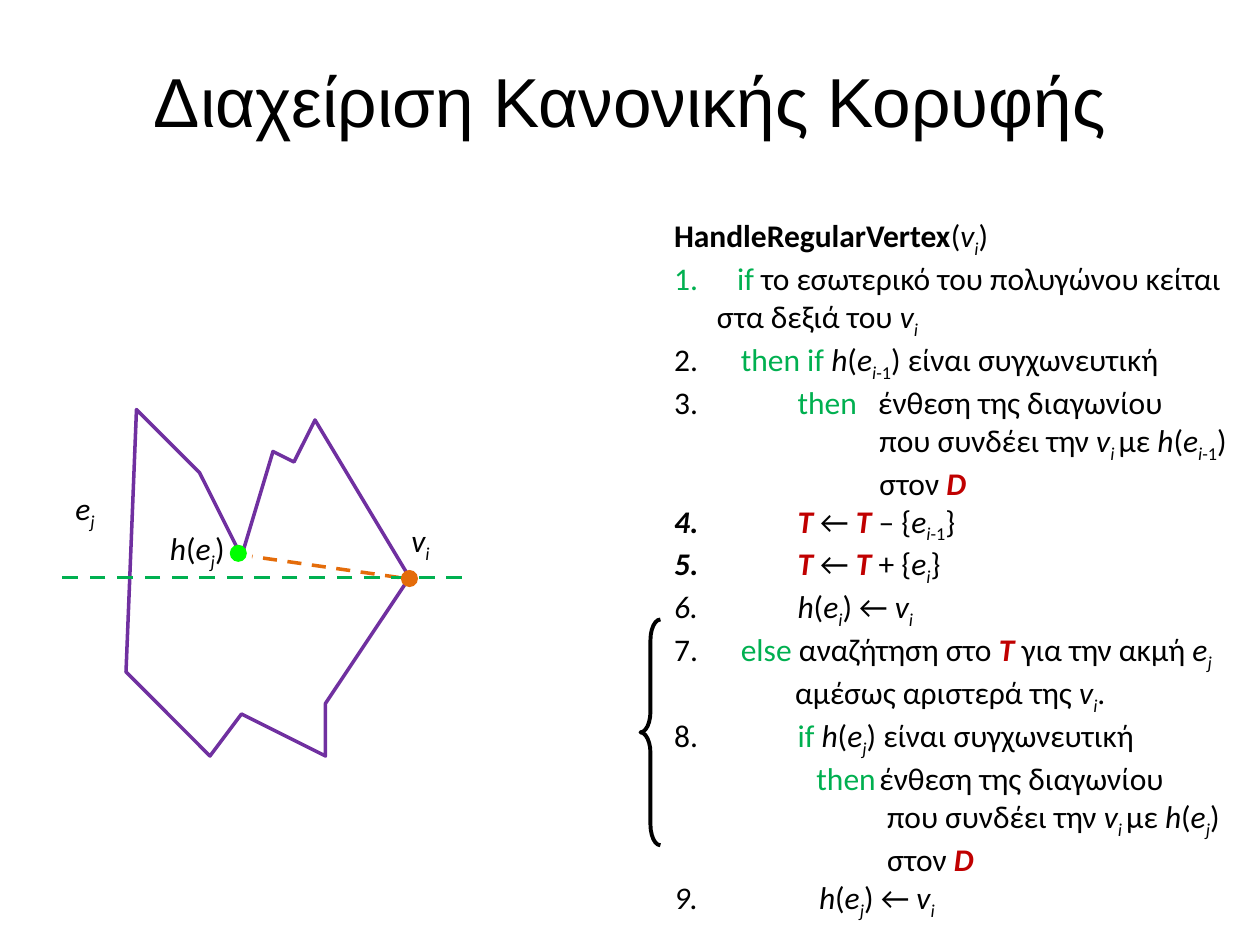
from typing import NamedTuple, Optional

from lxml.etree import SubElement
from pptx import Presentation
from pptx.dml.color import RGBColor
from pptx.enum.dml import MSO_LINE_DASH_STYLE as Dash
from pptx.enum.shapes import MSO_CONNECTOR as Connector, MSO_SHAPE as Shape
from pptx.enum.text import MSO_ANCHOR as Anchor, MSO_AUTO_SIZE as AutoSize, PP_ALIGN as Align
from pptx.oxml.ns import qn
from pptx.util import Emu, Inches, Pt

BLACK = RGBColor(0x00, 0x00, 0x00)
GREEN = RGBColor(0x00, 0xB0, 0x50)
LIME = RGBColor(0x00, 0xFF, 0x00)
ORANGE = RGBColor(0xE4, 0x6C, 0x0A)
PURPLE = RGBColor(0x70, 0x30, 0xA0)
RED = RGBColor(0xC0, 0x00, 0x00)

SLIDE_WIDTH, SLIDE_HEIGHT = Inches(10), Inches(7.5)
COLUMNS = 120  # square grid cells, 120 x 90
CELL = SLIDE_WIDTH / COLUMNS


class Style(NamedTuple):
    color: RGBColor = BLACK
    bold: bool = False
    italic: bool = False
    subscript: bool = False


PLAIN, BOLD = Style(), Style(bold=True)
VARIABLE = Style(italic=True)
INDEX, INDEX_NUMBER = Style(italic=True, subscript=True), Style(subscript=True)
KEYWORD = Style(color=GREEN)
STRUCTURE = Style(color=RED, bold=True, italic=True)

Pieces = list[tuple[str, Style]]


class Line(NamedTuple):
    """A line of the algorithm; indent and tab are inches from the text edge."""
    indent: float
    pieces: Pieces
    number: Optional[int] = None
    number_color: RGBColor = BLACK
    tab: Optional[float] = None


class Label(NamedTuple):
    column: float
    row: float
    columns: float
    pieces: Pieces


class Dot(NamedTuple):
    column: float
    row: float
    color: RGBColor


class DashedLine(NamedTuple):
    start: tuple[float, float]
    end: tuple[float, float]
    color: RGBColor
    weight: float


def indexed(name: str, index: str, number: str = "") -> Pieces:
    pieces = [(name, VARIABLE), (index, INDEX)]
    return pieces + [(number, INDEX_NUMBER)] if number else pieces


def helper(index: str, number: str = "") -> Pieces:
    return [("h", VARIABLE), ("(", PLAIN), *indexed("e", index, number), (")", PLAIN)]


def joining(index: str, number: str = "") -> Pieces:
    return [("που συνδέει την ", PLAIN), *indexed("v", "i "), ("με ", PLAIN),
            *helper(index, number)]


def update(sign: str, edge: Pieces) -> Pieces:
    return [("T", STRUCTURE), (" ← ", PLAIN), ("T", STRUCTURE), (f" {sign} {{", PLAIN),
            *edge, ("}", PLAIN)]


VERTEX = indexed("v", "i")
MERGE_TEST = (" είναι συγχωνευτική", PLAIN)
INSERT = [("then\t", KEYWORD), ("ένθεση της διαγωνίου", PLAIN)]
INTO_D = [("στον ", PLAIN), ("D", STRUCTURE)]

ALGORITHM = [
    Line(0, [("HandleRegularVertex", BOLD), ("(", PLAIN), *VERTEX, (")", PLAIN)]),
    Line(0.5, [("if ", KEYWORD), ("το εσωτερικό του πολυγώνου κείται", PLAIN)], 1, GREEN),
    Line(0.34, [("στα δεξιά του ", PLAIN), *VERTEX]),
    Line(0.53, [("then if ", KEYWORD), *helper("i", "-1"), MERGE_TEST], 2),
    Line(0.98, INSERT, 3, tab=1.62),
    Line(1.63, joining("i", "-1")),
    Line(1.63, INTO_D),
    Line(0.98, update("–", indexed("e", "i", "-1")), 4),
    Line(0.98, update("+", indexed("e", "i")), 5),
    Line(0.98, [*helper("i"), (" ← ", PLAIN), *VERTEX], 6),
    Line(0.53, [("else ", KEYWORD), ("αναζήτηση στο ", PLAIN), ("T ", STRUCTURE),
                ("για την ακμή ", PLAIN), *indexed("e", "j")], 7),
    Line(0.96, [("αμέσως αριστερά της ", PLAIN), *VERTEX, (".", PLAIN)]),
    Line(0.98, [("if ", KEYWORD), *helper("j"), MERGE_TEST], 8),
    Line(1.13, INSERT, tab=1.71),
    Line(1.69, joining("j")),
    Line(1.69, INTO_D),
    Line(1.15, [*helper("j"), (" ← ", PLAIN), *VERTEX], 9),
]
POLYGON = [(31, 67), (39, 55), (30, 40), (28, 44), (26, 43), (23, 53),
           (19, 45), (13, 39), (12, 64), (20, 72), (23, 68), (31, 72)]
LABELS = [Label(38, 49, 4.2, VERTEX), Label(6, 46, 4.3, indexed("e", "j")),
          Label(15, 49.8, 7.8, helper("j"))]
DASHED_LINES = [DashedLine((38, 55), (24, 53), ORANGE, 2),
                DashedLine((44, 55), (5, 55), GREEN, 2.25)]
DOTS = [Dot(22.7, 52.7, LIME), Dot(39, 55.1, ORANGE)]
DOT_SIZE = 1.5


def grid(*cells: float) -> list[Emu]:
    return [Emu(round(cell * CELL)) for cell in cells]


def place(shape, *cells: float) -> None:
    shape.left, shape.top, shape.width, shape.height = grid(*cells)


def write(paragraph, pieces: Pieces) -> None:
    for text, style in pieces:
        run = paragraph.add_run()
        run.text = text
        font = run.font
        font.name, font.size = "Calibri", Pt(18)
        font.bold, font.italic = style.bold, style.italic
        font.color.rgb = style.color
        if style.subscript:
            font._element.set("baseline", "-25000")


def format_list_line(paragraph, line: Line) -> None:
    properties = paragraph._p.get_or_add_pPr()
    properties.set("marL", str(Inches(line.indent)))
    properties.set("indent", str(-Inches(line.indent) if line.number else 0))
    paragraph.space_before = Pt(0)
    if line.number:
        color = SubElement(properties, qn("a:buClr"))
        SubElement(color, qn("a:srgbClr"), val=str(line.number_color))
        SubElement(properties, qn("a:buFont"), typeface="Calibri")
        SubElement(properties, qn("a:buAutoNum"), type="arabicPeriod",
                   startAt=str(line.number))
    else:
        SubElement(properties, qn("a:buNone"))
    if line.tab:
        tabs = SubElement(properties, qn("a:tabLst"))
        SubElement(tabs, qn("a:tab"), pos=str(Inches(line.tab)), algn="l")


def add_algorithm(body) -> None:
    place(body, 63, 20, 57, 63)
    frame = body.text_frame
    frame.word_wrap, frame.auto_size = True, AutoSize.NONE
    frame.vertical_anchor = Anchor.TOP
    for number, line in enumerate(ALGORITHM):
        paragraph = frame.add_paragraph() if number else frame.paragraphs[0]
        format_list_line(paragraph, line)
        write(paragraph, line.pieces)


def add_title(title) -> None:
    place(title, 9, 2, 102, 15)
    title.text_frame.text = "Διαχείριση Κανονικής Κορυφής"
    title.text_frame.vertical_anchor = Anchor.MIDDLE
    paragraph = title.text_frame.paragraphs[0]
    paragraph.alignment = Align.CENTER
    font = paragraph.runs[0].font
    font.name, font.size, font.color.rgb = "Arial", Pt(39.6), BLACK


def add_polygon(shapes) -> None:
    builder = shapes.build_freeform(*POLYGON[0], scale=CELL)
    builder.add_line_segments(POLYGON[1:], close=True)
    polygon = builder.convert_to_shape()
    polygon.shadow.inherit = False
    polygon.fill.background()
    polygon.line.color.rgb, polygon.line.width = PURPLE, Pt(2)


def add_label(shapes, label: Label) -> None:
    frame = shapes.add_textbox(*grid(label.column, label.row, label.columns, 4.8)).text_frame
    frame.word_wrap, frame.auto_size = False, AutoSize.SHAPE_TO_FIT_TEXT
    write(frame.paragraphs[0], label.pieces)


def add_dashed_line(shapes, dashed: DashedLine) -> None:
    connector = shapes.add_connector(Connector.STRAIGHT, *grid(*dashed.start, *dashed.end))
    connector.line.color.rgb, connector.line.width = dashed.color, Pt(dashed.weight)
    connector.line.dash_style = Dash.DASH
    SubElement(connector._element.spPr, qn("a:effectLst"))


def add_dot(shapes, dot: Dot) -> None:
    corner = dot.column - DOT_SIZE / 2, dot.row - DOT_SIZE / 2
    shape = shapes.add_shape(Shape.OVAL, *grid(*corner, DOT_SIZE, DOT_SIZE))
    shape.shadow.inherit = False
    shape.fill.solid()
    shape.fill.fore_color.rgb = shape.line.color.rgb = dot.color
    shape.line.width = Pt(0.75)


def add_brace(shapes) -> None:
    brace = shapes.add_shape(Shape.LEFT_BRACE, *grid(61, 59, 1.9, 21.5))
    brace.adjustments[0] = 1.04
    brace.shadow.inherit = False
    brace.fill.background()
    brace.line.color.rgb, brace.line.width = BLACK, Pt(2.25)


def main() -> None:
    presentation = Presentation()
    presentation.slide_width, presentation.slide_height = SLIDE_WIDTH, SLIDE_HEIGHT
    slide = presentation.slides.add_slide(presentation.slide_layouts[1])
    shapes = slide.shapes
    add_title(shapes.title)
    add_algorithm(slide.placeholders[1])
    add_polygon(shapes)
    for label in LABELS:
        add_label(shapes, label)
    for dashed in DASHED_LINES:
        add_dashed_line(shapes, dashed)
    for dot in DOTS:
        add_dot(shapes, dot)
    add_brace(shapes)
    presentation.save("out.pptx")


if __name__ == "__main__":
    main()
